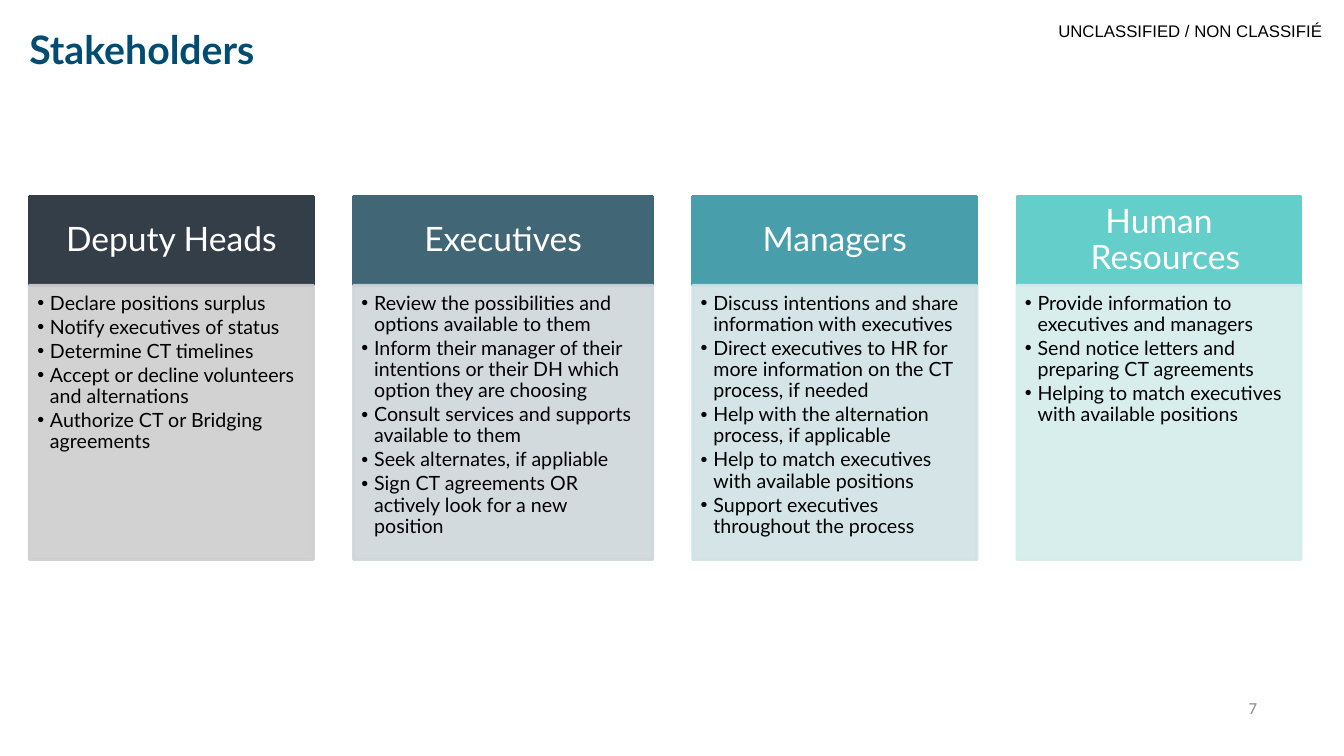
from lxml import etree
from pptx import Presentation
from pptx import util as u
from pptx.dml.color import RGBColor
from pptx.enum import shapes, text
from pptx.oxml.ns import qn

BLACK = RGBColor(0, 0, 0)
WHITE = RGBColor(0xFF, 0xFF, 0xFF)
TITLE_BLUE = RGBColor(0x00, 0x4D, 0x71)
NUMBER_GREY = RGBColor(0x8C, 0x8C, 0x8C)
CHARCOAL, PALE_GREY = RGBColor(0x33, 0x3E, 0x48), RGBColor(0xCE, 0xCE, 0xCF)
SLATE, PALE_SLATE = RGBColor(0x41, 0x66, 0x76), RGBColor(0xCE, 0xD6, 0xDB)
TEAL, PALE_TEAL = RGBColor(0x49, 0x9E, 0xAC), RGBColor(0xD0, 0xE2, 0xE5)
AQUA, PALE_AQUA = RGBColor(0x63, 0xCE, 0xCA), RGBColor(0xD3, 0xED, 0xEC)

HEADER_HEIGHT = 2.24
COLUMN_GAP = 1.01
HANGING = u.Cm(0.32)

STAKEHOLDERS = [
    ("Deputy Heads", 7.16, CHARCOAL, PALE_GREY, [
        "Declare positions surplus",
        "Notify executives of status",
        "Determine CT timelines",
        "Accept or decline volunteers and alternations",
        "Authorize CT or Bridging agreements"]),
    ("Executives", 7.54, SLATE, PALE_SLATE, [
        "Review the possibilities and options available to them",
        "Inform their manager of their intentions or their DH which option they are choosing",
        "Consult services and supports available to them",
        "Seek alternates, if appliable",
        "Sign CT agreements OR actively look for a new position"]),
    ("Managers", 7.16, TEAL, PALE_TEAL, [
        "Discuss intentions and share information with executives",
        "Direct executives to HR for more information on the CT process, if needed",
        "Help with the alternation process, if applicable",
        "Help to match executives with available positions",
        "Support executives throughout the process"]),
    ("Human Resources", 7.16, AQUA, PALE_AQUA, [
        "Provide information to executives and managers",
        "Send notice letters and preparing CT agreements",
        "Helping to match executives with available positions"]),
]


def set_font(p, name, size, color, bold=False):
    """Set the font of every run in a paragraph."""
    for r in p.runs:
        r.font.name, r.font.size, r.font.bold = name, u.Pt(size), bold
        r.font.color.rgb = color


def set_margins(tf, *margins):
    """Set the left, top, right and bottom margins in centimetres."""
    tf.margin_left, tf.margin_top, tf.margin_right, tf.margin_bottom = map(u.Cm, margins)


def set_hanging(p):
    """Give a paragraph the hanging indent of the lists."""
    pPr = p._p.get_or_add_pPr()
    pPr.set("marL", str(HANGING))
    pPr.set("indent", str(-HANGING))
    return pPr


def add_label(s, box, words, name, size, color, bold=False, wrap=True):
    """Add a one-line text box without margins and return it."""
    sp = s.shapes.add_textbox(*map(u.Cm, box))
    tf = sp.text_frame
    tf.word_wrap = wrap
    set_margins(tf, 0, 0, 0, 0)
    tf.text = words
    set_font(tf.paragraphs[0], name, size, color, bold)
    return sp


def add_panel(s, box, color, alpha=None):
    """Add a rectangle with matching fill and line and return it."""
    sp = s.shapes.add_shape(shapes.MSO_SHAPE.RECTANGLE, *map(u.Cm, box))
    sp.shadow.inherit = False
    sp.fill.solid()
    sp.fill.fore_color.rgb = color
    sp.line.color.rgb = color
    sp.line.width = u.Pt(2)
    if alpha:
        for clr in sp._element.spPr.iter(qn("a:srgbClr")):
            etree.SubElement(clr, qn("a:alpha"), val=str(alpha * 1000))
    sp.text_frame.word_wrap = True
    return sp


def add_header(s, box, words, color):
    """Add the coloured heading of a column."""
    tf = add_panel(s, box, color).text_frame
    set_margins(tf, 0.48, 0.28, 0.48, 0.28)
    tf.vertical_anchor = text.MSO_ANCHOR.MIDDLE
    tf.text = words
    p = tf.paragraphs[0]
    p.alignment = text.PP_ALIGN.CENTER
    p.line_spacing = 0.9
    if words == "Human Resources":
        set_hanging(p)
    set_font(p, "Lato", 24, WHITE)


def add_duties(s, box, duties, color):
    """Add the pale panel with the bulleted duties."""
    tf = add_panel(s, box, color, 90).text_frame
    set_margins(tf, 0.2, 0.2, 0.28, 0.3)
    tf.vertical_anchor = text.MSO_ANCHOR.TOP
    tf.text = "\n".join(duties)
    for p in tf.paragraphs:
        p.alignment = text.PP_ALIGN.LEFT
        p.line_spacing = 0.9
        p.space_after = u.Pt(2)
        pPr = set_hanging(p)
        etree.SubElement(pPr, qn("a:buFont"), typeface="Arial")
        etree.SubElement(pPr, qn("a:buChar"), char="•")
        set_font(p, "Lato", 14, BLACK)


def add_columns(s, left, top, height):
    """Place the stakeholder columns from left to right."""
    for words, width, dark, pale, duties in STAKEHOLDERS:
        add_header(s, (left, top, width, HEADER_HEIGHT), words, dark)
        body = (left, top + HEADER_HEIGHT, width, height - HEADER_HEIGHT)
        add_duties(s, body, duties, pale)
        left += width + COLUMN_GAP


def add_frame(s):
    """Add the title, the classification and the slide number."""
    add_label(s, (26.67, 0.53, 6.9, 0.51), "UNCLASSIFIED / NON CLASSIFIÉ",
              "Arial", 12, BLACK)
    number = add_label(s, (24.03, 17.32, 7.65, 1.02), "7", "Calibri", 12, NUMBER_GREY)
    number.text_frame.vertical_anchor = text.MSO_ANCHOR.MIDDLE
    number.text_frame.paragraphs[0].alignment = text.PP_ALIGN.RIGHT
    title = add_label(s, (0.74, 0, 23.09, 2.44), "Stakeholders", "Lato", 28, TITLE_BLUE, True)
    title.text_frame.vertical_anchor = text.MSO_ANCHOR.MIDDLE


def main():
    """Build and save the slide."""
    prs = Presentation()
    prs.slide_width, prs.slide_height = u.Cm(33.87), u.Cm(19.05)
    s = prs.slides.add_slide(prs.slide_layouts[6])
    add_frame(s)
    add_columns(s, 0.74, 4.95, 9.15)
    prs.save("out.pptx")


if __name__ == "__main__":
    main()
